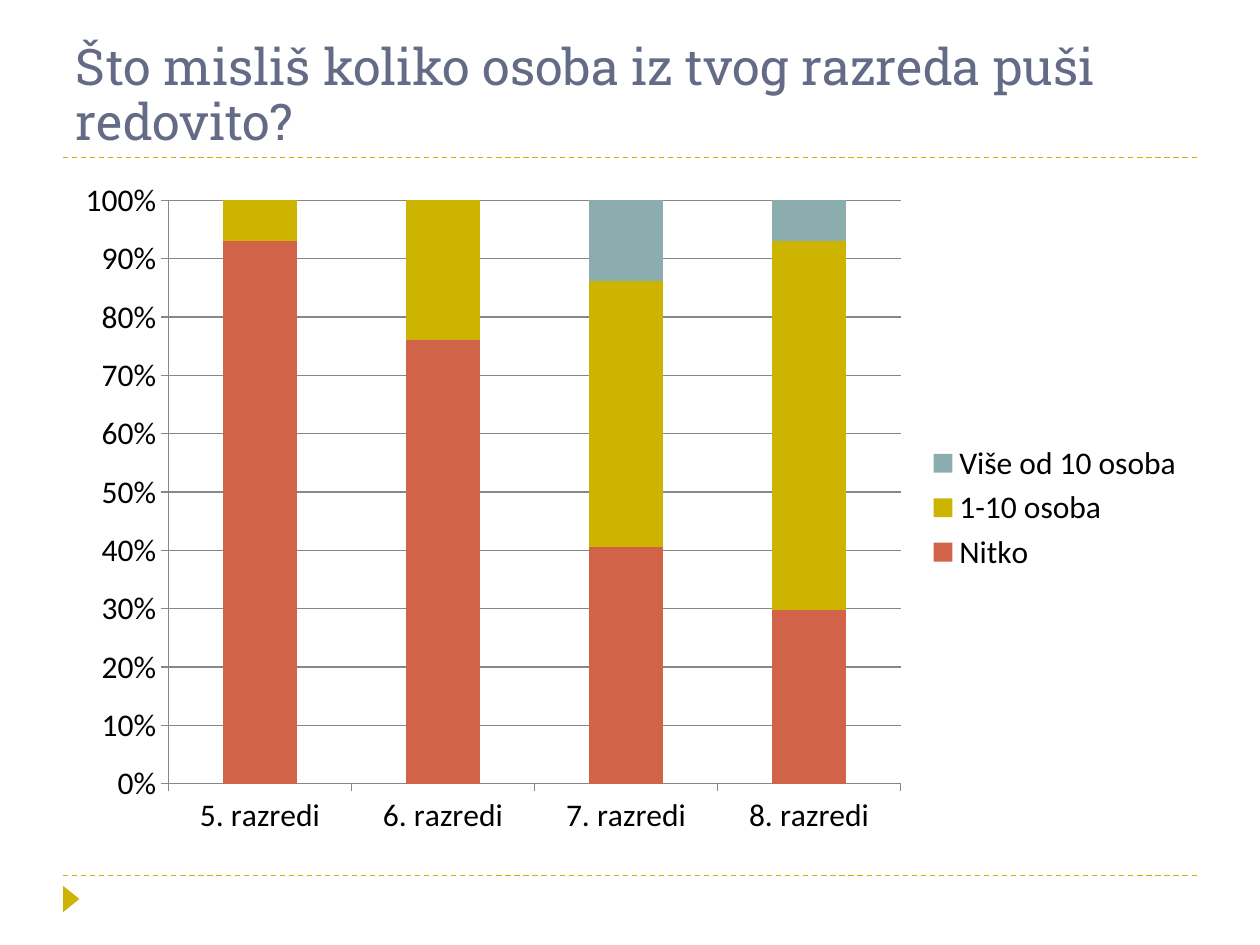
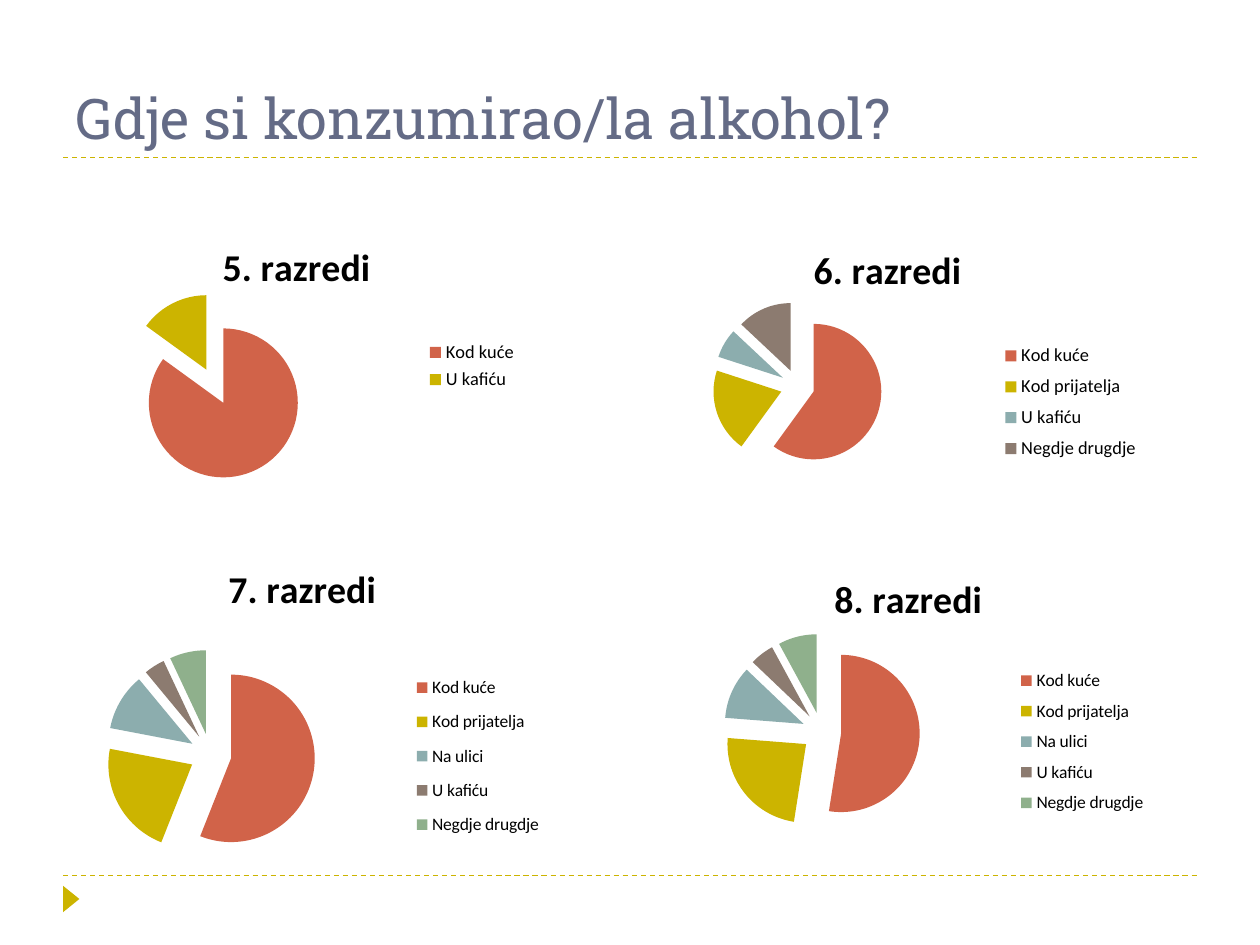
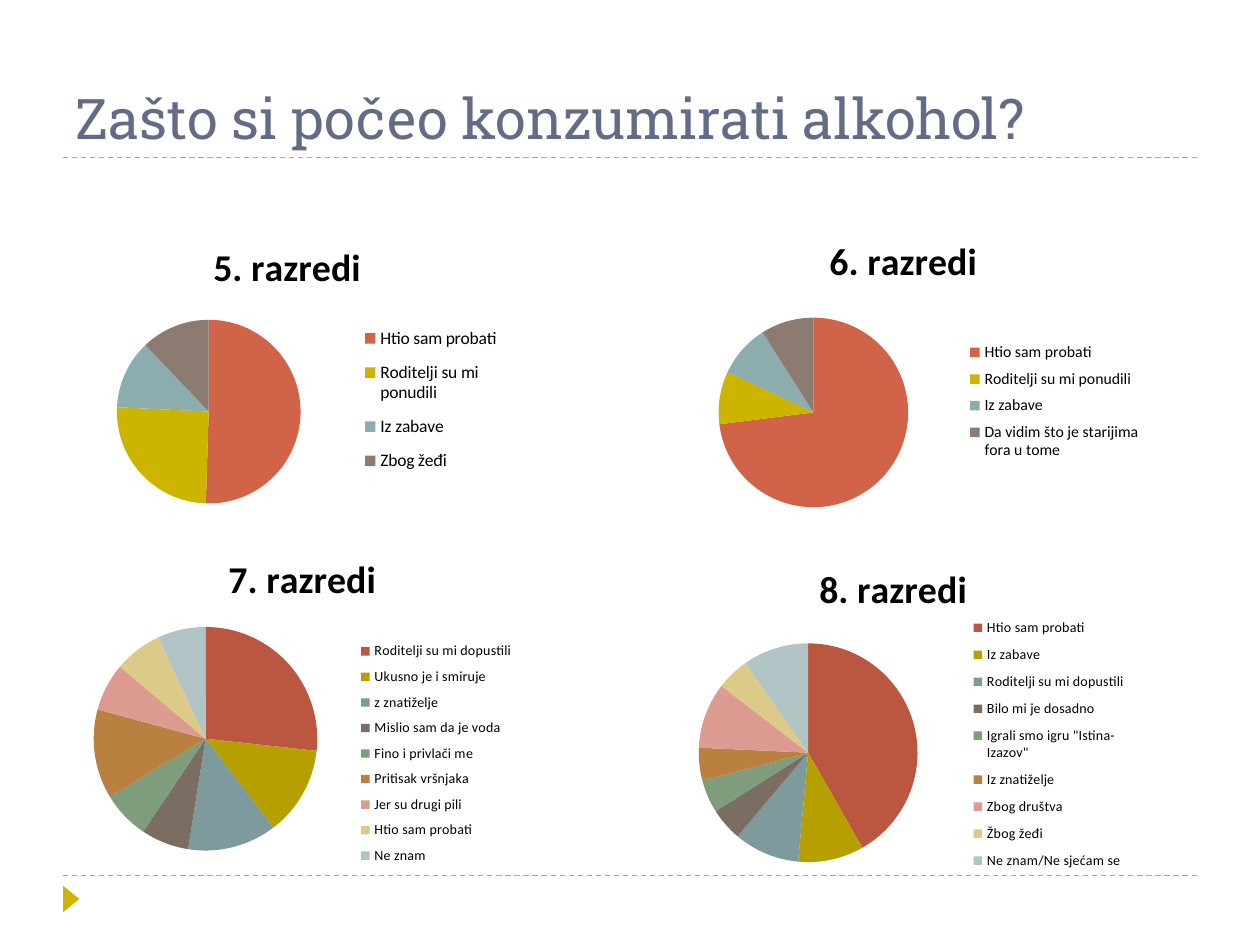
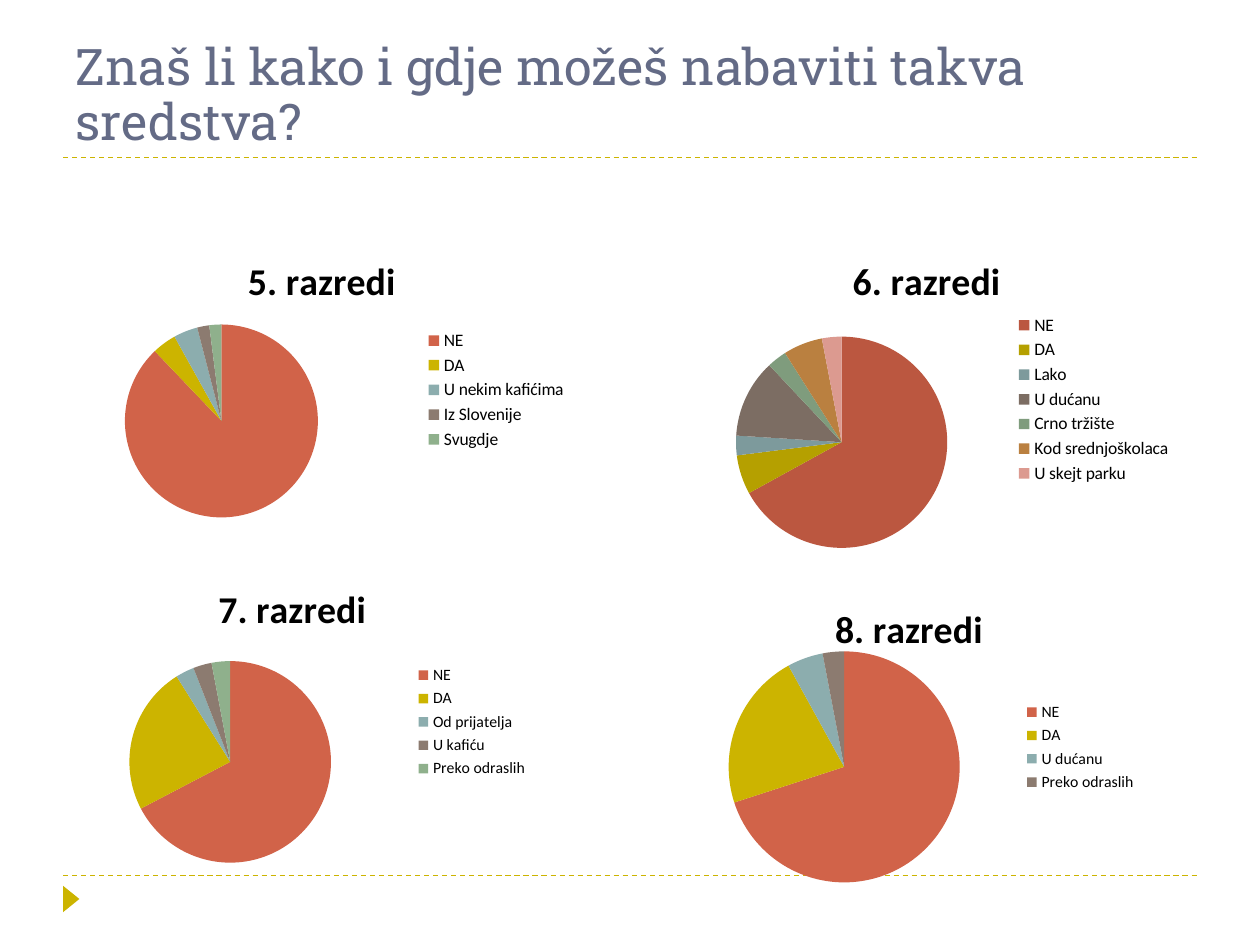
from dataclasses import dataclass

from lxml.etree import SubElement
from pptx import Presentation
from pptx.chart.data import CategoryChartData
from pptx.dml.color import RGBColor
from pptx.enum.chart import XL_CHART_TYPE, XL_LEGEND_POSITION, XL_TICK_MARK
from pptx.enum.dml import MSO_LINE
from pptx.enum.shapes import MSO_CONNECTOR, MSO_SHAPE
from pptx.enum.text import MSO_ANCHOR, MSO_AUTO_SIZE, PP_ALIGN
from pptx.oxml.ns import qn
from pptx.util import Pt


@dataclass(frozen=True)
class Theme:
    title_font: str = "Roboto Slab"
    body_font: str = "Calibri"
    title_color: str = "646B86"
    text_color: str = "000000"
    accent: str = "CCB400"
    grid: str = "878787"
    palette: tuple = ("D16349", "CCB400", "8CADAE", "8C7B70", "8FB08C")
    # Darker then lighter tones, for pies with more than six slices
    long_palette: tuple = ("BB5740", "B5A000", "7D9A9C", "7C6D63", "7F9C7D",
                           "BA8040", "DC9A90", "DBCA88", "B1C4C5")
    title_size: float = 32
    long_title_size: float = 28.8
    chart_size: float = 18
    chart_title_size: float = 21.6


def apply_format(target, **values):
    for name, value in values.items():
        setattr(target, name, value)


def rgb(code):
    return RGBColor.from_string(code)


def fill_solid(part, color):
    part.fill.solid()
    part.fill.fore_color.rgb = rgb(color)


def manual_layout(fractions, inner=False):
    """Return a c:layout element placing a chart part at x, y, w, h."""
    holder = SubElement(CategoryXml.root(), qn("c:layout"))
    manual = SubElement(holder, qn("c:manualLayout"))
    settings = [("layoutTarget", "inner")] if inner else []
    settings += [("xMode", "edge"), ("yMode", "edge")]
    settings += zip("xywh", fractions)
    for name, value in settings:
        SubElement(manual, qn(f"c:{name}")).set("val", str(value))
    return holder


class CategoryXml:
    """Supplies a parent for chart elements before they are placed."""

    @staticmethod
    def root():
        from lxml.etree import Element
        return Element(qn("c:chart"), nsmap={"c": qn("c:chart")[1:].split("}")[0]})


class SurveyDeck:
    def __init__(self, theme):
        self.theme = theme
        self.deck = Presentation()
        apply_format(self.deck, slide_width=Pt(720), slide_height=Pt(540))
        self.layout = self.deck.slide_layouts[5]
        self.page = None

    # Page frame, shared through the layout
    def add_frame(self):
        for y in (500.4, 90):
            self.add_rule(y)
        marker = self.page.shapes.add_shape(
            MSO_SHAPE.ISOSCELES_TRIANGLE, Pt(33.12), Pt(509.04), Pt(15.12), Pt(9.36))
        marker.rotation = 90
        marker.shadow.inherit = False
        fill_solid(marker, self.theme.accent)
        marker.line.fill.background()
        self.move_to_layout(marker)

    def add_rule(self, y):
        rule = self.page.shapes.add_connector(
            MSO_CONNECTOR.STRAIGHT, Pt(36), Pt(y), Pt(684), Pt(y))
        rule.line.color.rgb = rgb(self.theme.accent)
        apply_format(rule.line, width=Pt(0.75), dash_style=MSO_LINE.DASH)
        SubElement(rule.element.spPr, qn("a:effectLst"))
        self.move_to_layout(rule)

    def move_to_layout(self, shape):
        self.layout.shapes.element.append(shape.element)

    # Slide with its title
    def add_page(self, title, size):
        first = self.page is None
        self.page = self.deck.slides.add_slide(self.layout)
        if first:
            self.add_frame()
        box = self.page.shapes.title
        apply_format(box, left=Pt(36), top=Pt(12.24), width=Pt(648), height=Pt(77.76))
        apply_format(box.text_frame, word_wrap=True, auto_size=MSO_AUTO_SIZE.NONE,
                     vertical_anchor=MSO_ANCHOR.BOTTOM)
        para = box.text_frame.paragraphs[0]
        apply_format(para, alignment=PP_ALIGN.LEFT, line_spacing=0.9)
        span = para.add_run()
        span.text = title
        apply_format(span.font, name=self.theme.title_font, size=Pt(size))
        span.font.color.rgb = rgb(self.theme.title_color)

    # Parts common to every chart
    def style_font(self, font, size, bold=False):
        apply_format(font, name=self.theme.body_font, size=Pt(size), bold=bold)
        font.color.rgb = rgb(self.theme.text_color)

    def add_chart(self, kind, place, categories, series, legend_size):
        data = CategoryChartData()
        data.categories = categories
        for name, values in series:
            data.add_series(name, values)
        chart = self.page.shapes.add_chart(kind, *map(Pt, place), data).chart
        self.style_font(chart.font, self.theme.chart_size)
        chart.has_legend = True
        apply_format(chart.legend, position=XL_LEGEND_POSITION.RIGHT,
                     include_in_layout=False)
        self.style_font(chart.legend.font, legend_size)
        return chart

    def add_stacked_columns(self, place, categories, series):
        chart = self.add_chart(XL_CHART_TYPE.COLUMN_STACKED_100, place,
                               categories, series, self.theme.chart_size)
        chart.has_title = False
        plot = chart.plots[0]
        apply_format(plot, gap_width=150, overlap=100, vary_by_categories=False)
        for column, color in zip(plot.series, self.theme.palette):
            fill_solid(column.format, color)
        for axis in (chart.category_axis, chart.value_axis):
            apply_format(axis, major_tick_mark=XL_TICK_MARK.OUTSIDE,
                         minor_tick_mark=XL_TICK_MARK.NONE)
            axis.format.line.color.rgb = rgb(self.theme.grid)
        axis = chart.value_axis
        apply_format(axis, has_major_gridlines=True, minimum_scale=0,
                     maximum_scale=1, major_unit=0.1)
        axis.major_gridlines.format.line.color.rgb = rgb(self.theme.grid)
        apply_format(axis.tick_labels, number_format="0%", number_format_is_linked=False)

    def add_pie(self, title, place, slices, plot, legend_size, legend=None, explode=0):
        chart = self.add_chart(XL_CHART_TYPE.PIE, place, list(slices),
                               [(title, list(slices.values()))], legend_size)
        chart.has_title = True
        chart.chart_title.include_in_layout = False
        span = chart.chart_title.text_frame.paragraphs[0].add_run()
        span.text = title
        self.style_font(span.font, self.theme.chart_title_size, bold=True)
        self.place_parts(chart, plot, legend)
        if explode:
            series_name = chart.element.find(f".//{qn('c:ser')}/{qn('c:tx')}")
            explosion = SubElement(series_name.getparent(), qn("c:explosion"))
            explosion.set("val", str(explode))
            series_name.addnext(explosion)
        pie = chart.plots[0]
        pie.vary_by_categories = True
        many = len(slices) > 6
        palette = self.theme.long_palette if many else self.theme.palette
        for index, color in zip(range(len(slices)), palette):
            fill_solid(pie.series[0].points[index].format, color)

    def place_parts(self, chart, plot, legend):
        plot_area = chart.element.find(f".//{qn('c:plotArea')}")
        legend_box = chart.element.find(f".//{qn('c:legend')}")
        for part, fractions in ((plot_area, plot), (legend_box, legend)):
            if fractions:
                for old in part.findall(qn("c:layout")):
                    part.remove(old)
        plot_area.insert(0, manual_layout(plot, inner=True))
        if legend:
            legend_box.find(qn("c:legendPos")).addnext(manual_layout(legend))


GRADES = ("5. razredi", "6. razredi", "7. razredi", "8. razredi")

# Each pie: place in points, slices, plot area, legend size, legend area
WHERE_DRUNK = (
    ((36, 126, 267.12, 166.32), {"Kod kuće": 85, "U kafiću": 15},
     (0.04, 0.25, 0.57, 0.64), 10.5),
    ((360, 128.16, 294.48, 164.16),
     {"Kod kuće": 60, "Kod prijatelja": 20, "U kafiću": 7, "Negdje drugdje": 13},
     (0.06, 0.27, 0.53, 0.59), 10.5, (0.71, 0.39, 0.29, 0.46)),
    ((30.96, 309.6, 283.68, 192.96),
     {"Kod kuće": 56, "Kod prijatelja": 22, "Na ulici": 11, "U kafiću": 4,
      "Negdje drugdje": 7},
     (0.04, 0.32, 0.55, 0.62), 10, (0.74, 0.36, 0.25, 0.55)),
    ((377.28, 315.36, 283.68, 187.2),
     {"Kod kuće": 53, "Kod prijatelja": 24, "Na ulici": 11, "U kafiću": 5,
      "Negdje drugdje": 8},
     (0.04, 0.25, 0.57, 0.6), 10, (0.7, 0.33, 0.3, 0.5)),
)

WHY_STARTED = (
    ((36, 126, 256.32, 172.08),
     {"Htio sam probati": 50, "Roditelji su mi ponudili": 25, "Iz zabave": 12,
      "Zbog žeđi": 12},
     (0.12, 0.33, 0.41, 0.61), 10, (0.64, 0.31, 0.36, 0.57)),
    ((377.28, 122.4, 277.92, 177.12),
     {"Htio sam probati": 73, "Roditelji su mi ponudili": 9, "Iz zabave": 9,
      "Da vidim što je starijima fora u tome": 9},
     (0.12, 0.33, 0.39, 0.62), 9, (0.64, 0.39, 0.36, 0.43)),
    ((30.96, 303.84, 283.68, 209.52),
     {"Roditelji su mi dopustili": 27, "Ukusno je i smiruje": 13, "z znatiželje": 13,
      "Mislio sam da je voda": 7, "Fino i privlači me": 7, "Pritisak vršnjaka": 13,
      "Jer su drugi pili": 7, "Htio sam probati": 7, "Ne znam": 7},
     (0.04, 0.26, 0.53, 0.61), 8, (0.6, 0.28, 0.34, 0.65)),
    ((371.52, 309.6, 277.92, 192.96),
     {"Htio sam probati": 43, "Iz zabave": 10, "Roditelji su mi dopustili": 10,
      "Bilo mi je dosadno": 5, 'Igrali smo igru "Istina-Izazov"': 5,
      "Iz znatiželje": 5, "Zbog društva": 10, "Žbog žeđi": 5,
      "Ne znam/Ne sjećam se": 10},
     (0.1, 0.3, 0.45, 0.65), 8, (0.64, 0.2, 0.36, 0.8)),
)

WHERE_TO_GET = (
    ((36.72, 133.92, 294.48, 177.84),
     {"NE": 87, "DA": 4, "U nekim kafićima": 4, "Iz Slovenije": 2, "Svugdje": 2},
     (0, 0.29, 0.61, 0.62), 10),
    ((382.32, 133.92, 294.48, 188.64),
     {"NE": 67, "DA": 6, "Lako": 3, "U dućanu": 12, "Crno tržište": 3,
      "Kod srednjoškolaca": 6, "U skejt parku": 3},
     (0.13, 0.31, 0.41, 0.64), 10),
    ((25.2, 321.12, 283.68, 182.88),
     {"NE": 68, "DA": 24, "Od prijatelja": 3, "U kafiću": 3, "Preko odraslih": 3},
     (0.17, 0.31, 0.41, 0.63), 9),
    ((382.32, 332.64, 274.32, 188.64),
     {"NE": 70, "DA": 22, "U dućanu": 5, "Preko odraslih": 3},
     (0.04, 0.21, 0.65, 0.7), 9),
)


def main():
    theme = Theme()
    survey = SurveyDeck(theme)

    # Smokers by grade
    survey.add_page("Što misliš koliko osoba iz tvog razreda puši redovito?",
                    theme.long_title_size)
    survey.add_stacked_columns((36, 95.76, 648, 388.8), GRADES, (
        ("Nitko", (93, 76, 41, 30)),
        ("1-10 osoba", (7, 24, 46, 64)),
        ("Više od 10 osoba", (None, None, 14, 7)),
    ))

    # One pie per grade for each question
    questions = (
        ("Gdje si konzumirao/la alkohol?", theme.title_size, WHERE_DRUNK, 25),
        ("Zašto si počeo konzumirati alkohol?", theme.title_size, WHY_STARTED, 0),
        ("Znaš li kako i gdje možeš nabaviti takva sredstva?",
         theme.long_title_size, WHERE_TO_GET, 0),
    )
    for title, size, pies, explode in questions:
        survey.add_page(title, size)
        for grade, pie in zip(GRADES, pies):
            survey.add_pie(grade, *pie, explode=explode)

    survey.deck.save("out.pptx")


if __name__ == "__main__":
    main()
